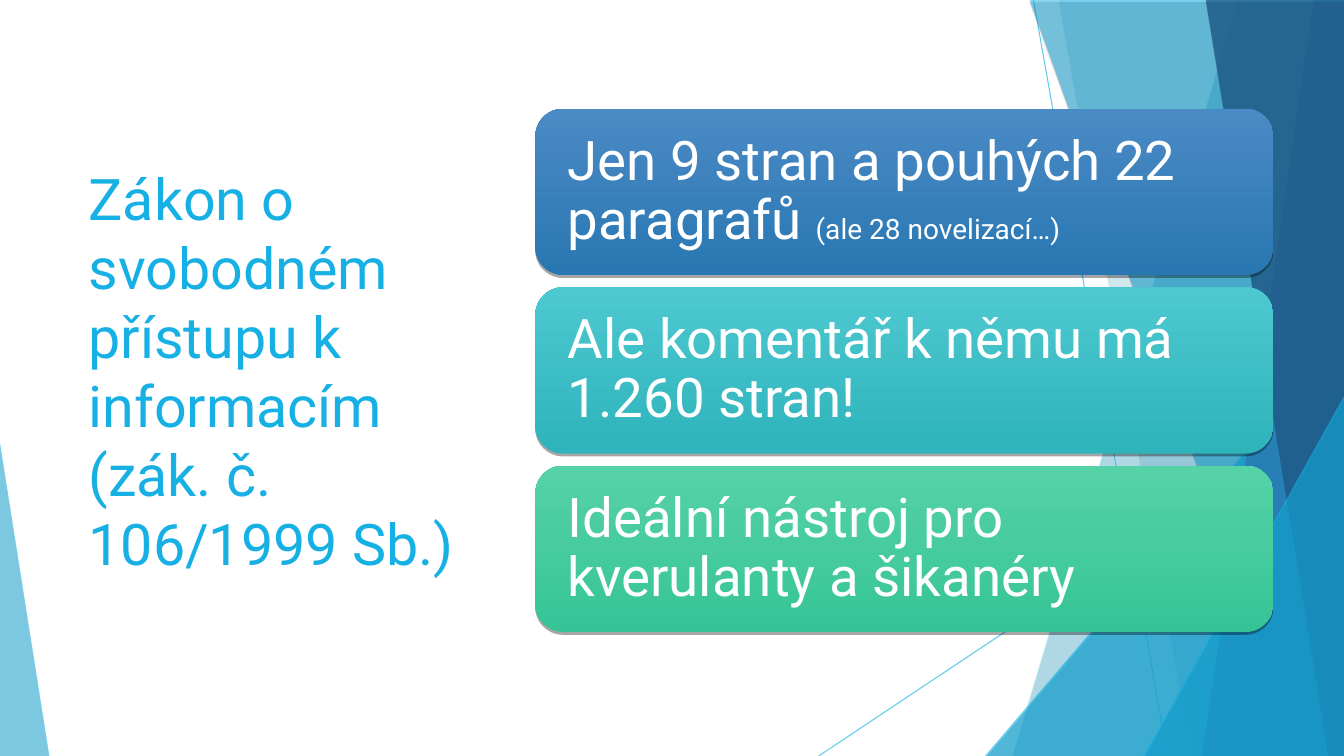
from typing import NamedTuple

from lxml import etree
from pptx import Presentation
from pptx.dml.color import RGBColor
from pptx.enum.shapes import MSO_CONNECTOR, MSO_SHAPE
from pptx.enum.text import MSO_ANCHOR, PP_ALIGN
from pptx.oxml.ns import qn
from pptx.util import Emu, Pt

PX = 9144  # EMU per px, 100 px to the inch
WIDTH, HEIGHT = 1333, 750
FONT = "Roboto"
SKY, AZURE, BLUE, NAVY = "5FCBEF", "17B0E4", "2E83C3", "226292"
WHITE = "FFFFFF"


class Ray(NamedTuple):
    start: tuple[int, int]
    end: tuple[int, int]


class Facet(NamedTuple):
    """Band between a slanted edge and the right side of the slide."""
    top_x: int
    bottom_x: int
    color: str
    opacity: int


class Wedge(NamedTuple):
    """Triangle standing on the bottom edge of the slide."""
    left: int
    top: int
    width: int
    apex: int
    color: str
    opacity: int


class Card(NamedTuple):
    text: str
    note: str
    bottom_color: str
    top_color: str


RAYS = [Ray((1025, 0), (1158, HEIGHT)), Ray((WIDTH, 403), (812, HEIGHT))]
DECORATION = [
    Facet(1228, 1004, SKY, 36),
    Facet(1050, 1182, SKY, 20),
    Wedge(977, 333, 356, 1, AZURE, 66),
    Facet(1021, 1291, AZURE, 50),
    Facet(1303, 1192, BLUE, 70),
    Facet(1196, 1318, NAVY, 80),
    Wedge(1134, 393, 199, 1, AZURE, 66),
    Wedge(0, 439, 49, 0, SKY, 70),
]
TITLE = "Zákon o svobodném přístupu k informacím (zák. č. 106/1999 Sb.)"
CARDS = [
    Card("Jen 9 stran a pouhých 22 paragrafů ", "(ale 28 novelizací…)", "2977B2", "4A8AC5"),
    Card("Ale komentář k němu má 1.260 stran!", "", "2FB4BC", "4DC8D0"),
    Card("Ideální nástroj pro kverulanty a šikanéry", "", "36C496", "56D2A7"),
]
CARD_LEFT, CARD_TOP, CARD_WIDTH, CARD_HEIGHT, CARD_PITCH = 531, 108, 732, 165, 177


def px(value: int) -> Emu:
    return Emu(value * PX)


def rgb(color: str) -> RGBColor:
    return RGBColor.from_string(color)


def add_alpha(color_element, percent: int) -> None:
    etree.SubElement(color_element, qn("a:alpha"), val=str(percent * 1000))


def add_shadow(shape) -> None:
    """Give the shape a hard, thin shadow just below it."""
    shape.line.fill.background()
    shape.shadow.inherit = False
    effects = shape._element.spPr.find(qn("a:effectLst"))
    shadow = etree.SubElement(effects, qn("a:outerShdw"), blurRad="0", dist=str(Pt(2)),
                              dir="5400000", rotWithShape="0")
    add_alpha(etree.SubElement(shadow, qn("a:srgbClr"), val="000000"), 35)


def add_ray(slide, ray: Ray) -> None:
    line = slide.shapes.add_connector(MSO_CONNECTOR.STRAIGHT, *map(px, ray.start + ray.end))
    line.line.color.rgb = rgb(SKY)
    line.line.width = Pt(0.75)
    etree.SubElement(line._element.spPr, qn("a:effectLst"))


def add_decoration(slide, part: Facet | Wedge) -> None:
    if isinstance(part, Facet):
        builder = slide.shapes.build_freeform(part.top_x, -1, scale=PX)
        builder.add_line_segments([(WIDTH, -1), (WIDTH, HEIGHT), (part.bottom_x, HEIGHT)])
        shape = builder.convert_to_shape()
    else:
        shape = slide.shapes.add_shape(MSO_SHAPE.ISOSCELES_TRIANGLE, px(part.left), px(part.top),
                                       px(part.width), px(HEIGHT - part.top))
        shape.adjustments[0] = part.apex
    shape.fill.solid()
    shape.fill.fore_color.rgb = rgb(part.color)
    add_alpha(shape._element.spPr.find(f"{qn('a:solidFill')}/{qn('a:srgbClr')}"), part.opacity)
    add_shadow(shape)


def add_run(paragraph, text: str, *, size: int, color: str) -> None:
    run = paragraph.add_run()
    run.text = text
    run.font.name = FONT
    run.font.size = Pt(size)
    run.font.color.rgb = rgb(color)


def add_title(slide) -> None:
    frame = slide.shapes.add_textbox(px(78), px(143), px(388), px(448)).text_frame
    frame.word_wrap = True
    frame.vertical_anchor = MSO_ANCHOR.MIDDLE
    add_run(frame.paragraphs[0], TITLE, size=41, color=AZURE)


def add_card(slide, card: Card, top: int) -> None:
    shape = slide.shapes.add_shape(MSO_SHAPE.ROUNDED_RECTANGLE, px(CARD_LEFT), px(top),
                                   px(CARD_WIDTH), px(CARD_HEIGHT))
    shape.fill.gradient()
    shape.fill.gradient_angle = 90
    for stop, color in zip(shape.fill.gradient_stops, (card.bottom_color, card.top_color)):
        stop.color.rgb = rgb(color)
    add_shadow(shape)

    frame = shape.text_frame
    frame.word_wrap = True
    frame.vertical_anchor = MSO_ANCHOR.MIDDLE
    frame.margin_left = frame.margin_top = frame.margin_bottom = px(24)
    frame.margin_right = px(16)
    paragraph = frame.paragraphs[0]
    paragraph.alignment = PP_ALIGN.LEFT
    paragraph.line_spacing = 0.9
    add_run(paragraph, card.text, size=39, color=WHITE)
    if card.note:
        add_run(paragraph, card.note, size=20, color=WHITE)


def main() -> None:
    presentation = Presentation()
    presentation.slide_width, presentation.slide_height = px(WIDTH), px(HEIGHT)
    slide = presentation.slides.add_slide(presentation.slide_layouts[6])

    # Background rays and facets
    for ray in RAYS:
        add_ray(slide, ray)
    for part in DECORATION:
        add_decoration(slide, part)

    # Title and cards
    add_title(slide)
    for index, card in enumerate(CARDS):
        add_card(slide, card, CARD_TOP + index * CARD_PITCH)

    presentation.save("out.pptx")


if __name__ == "__main__":
    main()
